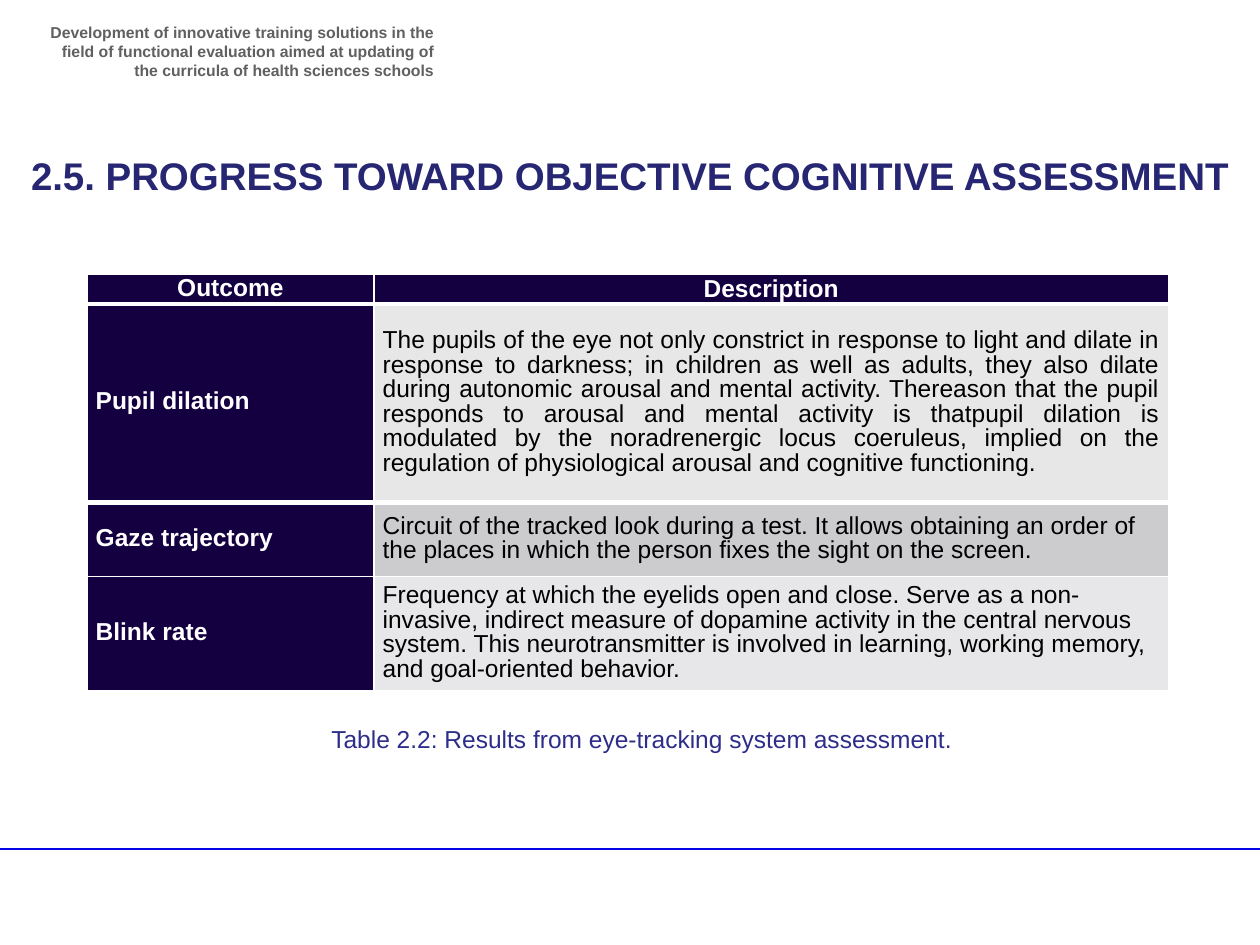
"""Build the slide on objective cognitive assessment with its outcome table."""
from lxml import etree
from pptx import Presentation
from pptx.dml.color import RGBColor
from pptx.enum import shapes, text
from pptx.oxml import parse_xml
from pptx.oxml.ns import nsdecls, qn
from pptx.util import Pt


def color(value):
    return RGBColor.from_string(value)


def write(frame, content, size, fill, bold=False, **paragraph_format):
    frame.word_wrap = True
    paragraph = frame.paragraphs[0]
    paragraph.text = content
    for name, value in paragraph_format.items():
        setattr(paragraph, name, value)
    for name, value in {"name": "Arial", "size": Pt(size), "bold": bold}.items():
        setattr(paragraph.font, name, value)
    paragraph.font.color.rgb = color(fill)


LEFT, CENTER = text.PP_ALIGN.LEFT, text.PP_ALIGN.CENTER
RIGHT, JUSTIFY = text.PP_ALIGN.RIGHT, text.PP_ALIGN.JUSTIFY
NAVY, WHITE, BLACK = "140041", "FFFFFF", "000000"

presentation = Presentation()
presentation.slide_width, presentation.slide_height = Pt(720), Pt(540)
slide = presentation.slides.add_slide(presentation.slide_layouts[5])

rule = slide.shapes.add_connector(
    shapes.MSO_CONNECTOR.STRAIGHT, Pt(-3.6), Pt(485.3), Pt(720), Pt(485.3))
rule.line.color.rgb = color("0404E6")
rule.line.width = Pt(1)
etree.SubElement(rule.element.spPr, qn("a:effectLst"))

project = slide.shapes.add_textbox(Pt(20), Pt(9.3), Pt(234.9), Pt(34))
write(project.text_frame,
      "Development of innovative training solutions in the ﬁeld of functional "
      "evaluation aimed at updating of the curricula of health sciences schools",
      9, "606060", True, alignment=RIGHT)

title = slide.shapes.title
title_format = {"left": Pt(7.2), "top": Pt(82.8), "width": Pt(705.6), "height": Pt(34)}
for name, value in title_format.items():
    setattr(title, name, value)
write(title.text_frame, "2.5. PROGRESS TOWARD OBJECTIVE COGNITIVE ASSESSMENT",
      22, "262673", True, alignment=CENTER)
title.text_frame.auto_size = text.MSO_AUTO_SIZE.NONE
title.text_frame.vertical_anchor = text.MSO_ANCHOR.MIDDLE

header = [(17, 1, 3, [("Outcome", NAVY, WHITE, True, CENTER, Pt(14)),
                      ("Description", NAVY, WHITE, True, CENTER, None)])]
outcomes = [
    (113.5, 1, 3, "Pupil dilation", "E7E7E8", JUSTIFY,
     "The pupils of the eye not only constrict in response to light and dilate in "
     "response to darkness; in children as well as adults, they also dilate during "
     "autonomic arousal and mental activity. Thereason that the pupil responds to "
     "arousal and mental activity is thatpupil dilation is modulated by the "
     "noradrenergic locus coeruleus, implied on the regulation of physiological "
     "arousal and cognitive functioning. "),
    (42.5, 3, 1, "Gaze trajectory", "CCCCCF", LEFT,
     "Circuit of the tracked look during a test. It allows obtaining an order of the "
     "places in which the person fixes the sight on the screen."),
    (65, 1, 1, "Blink rate", "E7E7E9", LEFT,
     "Frequency at which the eyelids open and close. Serve as a non-invasive, "
     "indirect measure of dopamine activity in the central nervous system. This "
     "neurotransmitter is involved in learning, working memory, and goal-oriented "
     "behavior."),
]
body = [(height, upper, lower, [(outcome, NAVY, WHITE, True, LEFT, Pt(14)),
                                (description, shade, BLACK, False, align, Pt(14))])
        for height, upper, lower, outcome, shade, align, description in outcomes]

cell_format = {"margin_left": Pt(5), "margin_right": Pt(5), "margin_top": 0,
               "margin_bottom": 0, "vertical_anchor": text.MSO_ANCHOR.MIDDLE}
for top, rows in ((173.5, body), (156.7, header)):
    total = sum(row[0] for row in rows)
    table = slide.shapes.add_table(
        len(rows), 2, Pt(49.7), Pt(top), Pt(618), Pt(total)).table
    for column, width in zip(table.columns, (164, 454)):
        column.width = Pt(width)
    for row, (height, upper, lower, contents) in zip(table.rows, rows):
        row.height = Pt(height)
        for cell, (content, shade, ink, bold, align, spacing) in zip(row.cells, contents):
            for name, value in cell_format.items():
                setattr(cell, name, value)
            properties = cell._tc.get_or_add_tcPr()
            for side, width in zip("LRTB", (1, 1, upper, lower)):
                properties.append(parse_xml(
                    f'<a:ln{side} {nsdecls("a")} w="{Pt(width)}"><a:solidFill>'
                    f'<a:srgbClr val="{WHITE}"/></a:solidFill></a:ln{side}>'))
            cell.fill.solid()
            cell.fill.fore_color.rgb = color(shade)
            write(cell.text_frame, content, 14, ink, bold,
                  alignment=align, line_spacing=spacing)

caption = slide.shapes.add_textbox(Pt(182.2), Pt(410.4), Pt(370.8), Pt(24.5))
write(caption.text_frame, "Table 2.2: Results from eye-tracking system assessment.",
      14, "2D2D8A")
caption.text_frame.word_wrap = False

presentation.save("out.pptx")
